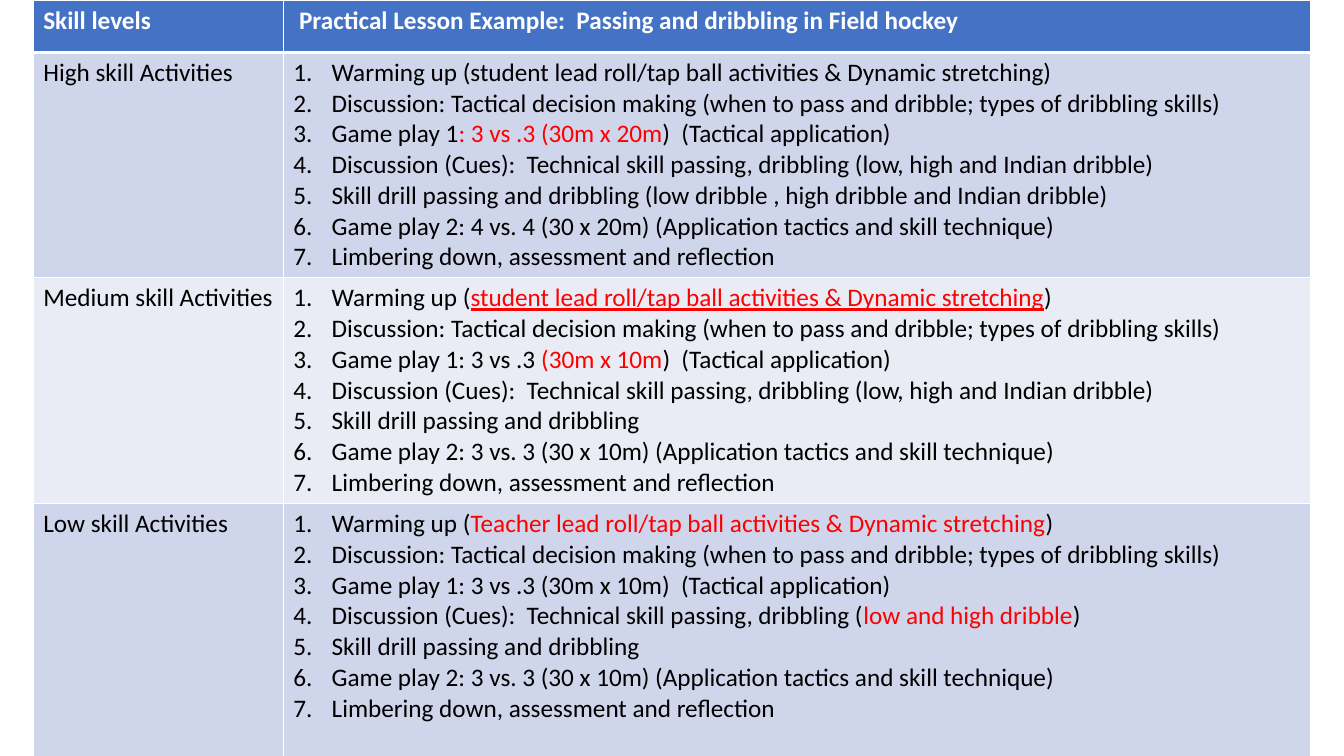
import pptx
import pptx.util
import pptx.dml.color
import lxml.etree
from pptx.util import Inches

WHITE = pptx.dml.color.RGBColor(0xFF, 0xFF, 0xFF)
BLACK = pptx.dml.color.RGBColor(0, 0, 0)
RED = pptx.dml.color.RGBColor(0xFF, 0, 0)
BLUE = pptx.dml.color.RGBColor(0x44, 0x72, 0xC4)
DARK = pptx.dml.color.RGBColor(0xCF, 0xD5, 0xEA)
LIGHT = pptx.dml.color.RGBColor(0xE9, 0xEB, 0xF5)

TALK = "Discussion: Tactical decision making (when to pass and dribble; types of dribbling skills)"
CUES = "Discussion (Cues):  Technical skill passing, dribbling "
DRILL = "Skill drill passing and dribbling"
GAME = "Game play 2: {} (Application tactics and skill technique)"
END = "Limbering down, assessment and reflection"

levels = [
    ("High skill Activities", DARK, [
        "Warming up (student lead roll/tap ball activities & Dynamic stretching)",
        TALK,
        "Game play 1|: 3 vs .3 (30m x 20m|)  (Tactical application)",
        CUES + "(low, high and Indian dribble)",
        DRILL + " (low dribble , high dribble and Indian dribble)",
        GAME.format("4 vs. 4 (30 x 20m)"),
        END]),
    ("Medium skill Activities", LIGHT, [
        "Warming up (|student lead roll/tap ball activities & Dynamic stretching|)",
        TALK,
        "Game play 1: 3 vs .3 |(30m x 10m|)  (Tactical application)",
        CUES + "(low, high and Indian dribble)",
        DRILL,
        GAME.format("3 vs. 3 (30 x 10m)"),
        END]),
    ("Low skill Activities", DARK, [
        "Warming up (|Teacher lead roll/tap ball activities & Dynamic stretching|)",
        TALK,
        "Game play 1: 3 vs .3 (30m x 10m)  (Tactical application)",
        CUES + "(|low and high dribble|)",
        DRILL,
        GAME.format("3 vs. 3 (30 x 10m)"),
        END]),
]


def write(par, text, color=BLACK, bold=False, line=False):
    for i, part in enumerate(text.split("|")):
        marked = i % 2 == 1
        run = par.add_run()
        run.text = part
        run.font.name = "Calibri"
        run.font.size = pptx.util.Pt(18)
        run.font.bold = bold
        run.font.underline = line and marked
        run.font.color.rgb = RED if marked else color


def style(cell, fill, top=1, bottom=1):
    props = cell._tc.get_or_add_tcPr()
    for side, width in (("L", 1), ("R", 1), ("T", top), ("B", bottom)):
        edge = lxml.etree.SubElement(props, pptx.oxml.ns.qn("a:ln" + side), w=str(pptx.util.Pt(width)))
        solid = lxml.etree.SubElement(edge, pptx.oxml.ns.qn("a:solidFill"))
        lxml.etree.SubElement(solid, pptx.oxml.ns.qn("a:srgbClr"), val=str(WHITE))
    cell.fill.solid()
    cell.fill.fore_color.rgb = fill


deck = pptx.Presentation()
deck.slide_width = Inches(13.33)
deck.slide_height = Inches(7.5)
slide = deck.slides.add_slide(deck.slide_layouts[6])

table = slide.shapes.add_table(4, 2, Inches(0.33), Inches(0), Inches(12.67), Inches(7.5)).table
for col, width in zip(table.columns, (2.48, 10.19)):
    col.width = Inches(width)
for row, height in zip(table.rows, (0.52, 2.23, 2.24, 2.51)):
    row.height = Inches(height)

heads = ("Skill levels", " Practical Lesson Example:  Passing and dribbling in Field hockey")
for c, head in enumerate(heads):
    cell = table.cell(0, c)
    style(cell, BLUE, bottom=3)
    write(cell.text_frame.paragraphs[0], head, color=WHITE, bold=True)

for r, (level, fill, steps) in enumerate(levels, 1):
    name, plan = table.cell(r, 0), table.cell(r, 1)
    for cell in (name, plan):
        style(cell, fill, top=3 if r == 1 else 1)
    write(name.text_frame.paragraphs[0], level)
    for i, step in enumerate(steps):
        frame = plan.text_frame
        par = frame.add_paragraph() if i else frame.paragraphs[0]
        props = par._p.get_or_add_pPr()
        props.set("marL", str(Inches(0.38)))
        props.set("indent", str(Inches(-0.38)))
        lxml.etree.SubElement(props, pptx.oxml.ns.qn("a:buFont"), typeface="+mj-lt")
        lxml.etree.SubElement(props, pptx.oxml.ns.qn("a:buAutoNum"), type="arabicPeriod")
        write(par, step, line=level.startswith("Medium"))
        if level.startswith("Medium") and i:
            for run in par.runs:
                run.font.underline = False

deck.save("out.pptx")
